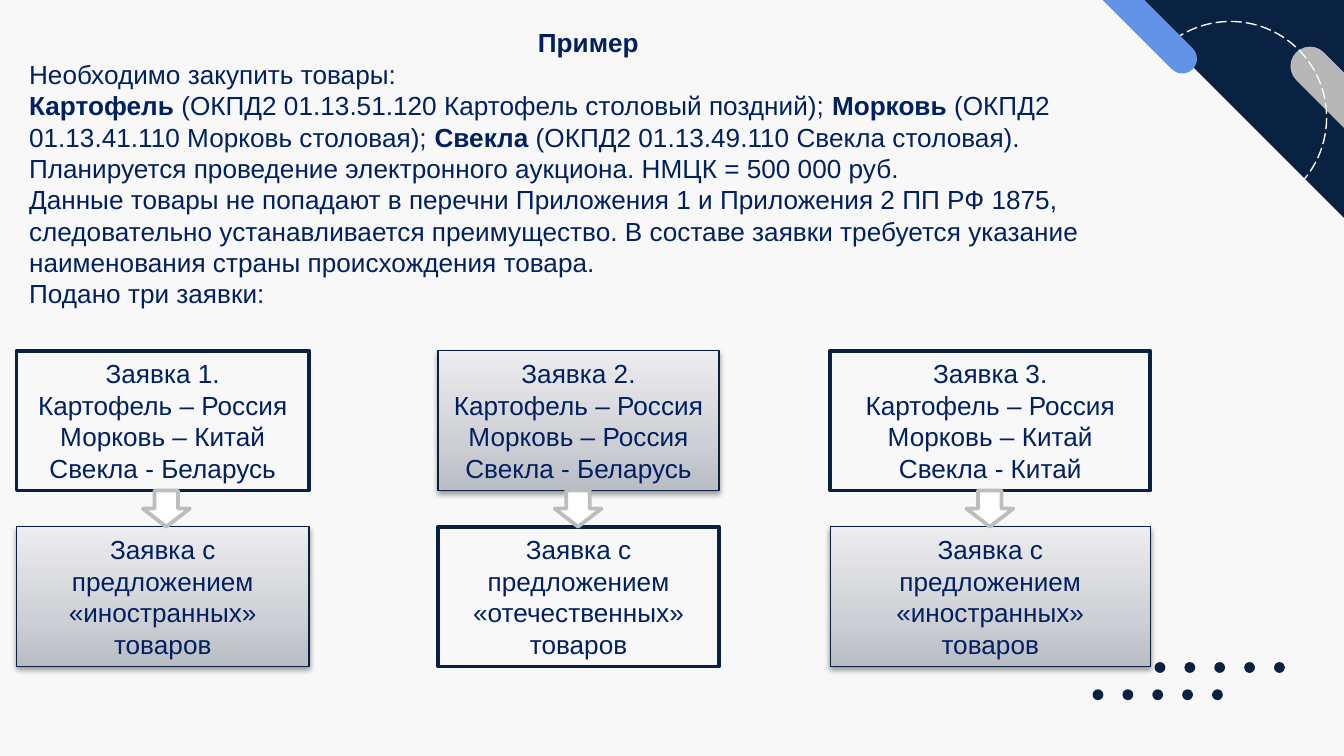
"""Build a slide that compares three bids for a vegetable purchase."""
from dataclasses import dataclass
from typing import NamedTuple

from pptx import Presentation
from pptx.dml.color import RGBColor
from pptx.enum.dml import MSO_LINE
from pptx.enum.shapes import MSO_SHAPE as SHAPE
from pptx.enum.text import MSO_ANCHOR as ANCHOR, MSO_AUTO_SIZE as AUTO, PP_ALIGN as ALIGN
from pptx.oxml import parse_xml
from pptx.oxml.ns import nsdecls, qn
from pptx.util import Pt


@dataclass(frozen=True)
class Theme:
    paper: str = "F8F8F8"
    navy: str = "092241"
    edge: str = "072141"
    text: str = "002060"
    gray: str = "B7B7B7"
    blue: str = "6194E6"
    white: str = "FFFFFF"
    arrow_line: str = "BDBDBD"
    gradient: tuple = ((0, "B9BCC4"), (35, "CED0D5"), (100, "EDEDEF"))
    font: str = "Arial"
    size: float = 14


class Box(NamedTuple):
    left: float
    top: float
    width: float
    height: float


class Run(NamedTuple):
    text: str
    bold: bool = False


class Bid(NamedTuple):
    left: float
    width: float
    lines: tuple
    verdict: str
    shaded: bool


T = Theme()
BID_TOP, VERDICT_TOP, CARD_HEIGHT = 187.9, 282.2, 74.9
ARROW_LEFT, ARROW_STEP = 76.5, 220.6
DOT, DOT_STEP = 5.8, 16
DOT_ROWS = ((618.5, 354.7), (585.3, 369.3))

INTRO = (
    (Run("Пример", True),),
    (Run("Необходимо закупить товары:"),),
    (
        Run("Картофель", True),
        Run(" (ОКПД2 01.13.51.120 Картофель столовый поздний); "),
        Run("Морковь ", True),
        Run("(ОКПД2 01.13.41.110 Морковь столовая); "),
        Run("Свекла", True),
        Run(" (ОКПД2 01.13.49.110 Свекла столовая)."),
    ),
    (Run("Планируется проведение электронного аукциона. НМЦК = 500 000 руб."),),
    (Run("Данные товары не попадают в перечни Приложения 1 и Приложения 2 ПП РФ 1875, "
         "следовательно устанавливается преимущество. В составе заявки требуется указание "
         "наименования страны происхождения товара."),),
    (Run("Подано три заявки:"),),
)

BIDS = (
    Bid(8.9, 156.6, ("Заявка 1.", "Картофель – Россия", "Морковь – Китай", "Свекла - Беларусь"),
        "«иностранных»", False),
    Bid(234.7, 150.5, ("Заявка 2.", "Картофель – Россия", "Морковь – Россия", "Свекла - Беларусь"),
        "«отечественных»", True),
    Bid(444.8, 171.4, ("Заявка 3.", "Картофель – Россия", "Морковь – Китай", "Свекла - Китай"),
        "«иностранных»", False),
)


def rgb(color: str) -> RGBColor:
    return RGBColor.from_string(color)


def add_shape(s, kind, box: Box, fill: str = "", line: str = "", weight: float = 0,
              rotation: float = 0):
    sp = s.shapes.add_shape(kind, *map(Pt, box))
    sp.shadow.inherit = False
    sp.rotation = rotation
    if fill:
        sp.fill.solid()
        sp.fill.fore_color.rgb = rgb(fill)
    else:
        sp.fill.background()
    if line:
        sp.line.color.rgb = rgb(line)
        sp.line.width = Pt(weight)
    else:
        sp.line.fill.background()
    return sp


def shade(sp) -> None:
    props = sp._element.spPr
    props.remove(props.find(qn("a:noFill")))
    stops = "".join(f'<a:gs pos="{pos * 1000}"><a:srgbClr val="{color}"/></a:gs>'
                    for pos, color in T.gradient)
    props.find(qn("a:prstGeom")).addnext(parse_xml(
        f'<a:gradFill {nsdecls("a")} rotWithShape="1"><a:gsLst>{stops}</a:gsLst>'
        '<a:lin ang="16200000" scaled="0"/></a:gradFill>'))
    props.find(qn("a:effectLst")).append(parse_xml(
        f'<a:outerShdw {nsdecls("a")} blurRad="{Pt(3.1)}" dist="{Pt(1.6)}" dir="5400000" '
        'rotWithShape="0"><a:srgbClr val="000000"><a:alpha val="38000"/></a:srgbClr>'
        '</a:outerShdw>'))


def write(tf, paragraphs, aligns) -> None:
    tf.word_wrap = True
    tf.auto_size = AUTO.SHAPE_TO_FIT_TEXT
    for i, (runs, align) in enumerate(zip(paragraphs, aligns)):
        p = tf.add_paragraph() if i else tf.paragraphs[0]
        p.alignment = align
        p.font.name, p.font.size = T.font, Pt(T.size)
        p.font.color.rgb = rgb(T.text)
        for run in runs:
            r = p.add_run()
            r.text = run.text
            r.font.bold = run.bold


def add_card(s, box: Box, lines: tuple, shaded: bool) -> None:
    if shaded:
        sp = add_shape(s, SHAPE.RECTANGLE, box, line=T.edge, weight=0.75)
        shade(sp)
    else:
        sp = add_shape(s, SHAPE.RECTANGLE, box, T.paper, T.navy, 2)
    sp.text_frame.vertical_anchor = ANCHOR.MIDDLE
    write(sp.text_frame, [(Run(line),) for line in lines], [ALIGN.CENTER] * len(lines))


def add_decor(s) -> None:
    for left, top in DOT_ROWS:
        for i in range(5):
            add_shape(s, SHAPE.OVAL, Box(left + i * DOT_STEP, top, DOT, DOT), T.navy)
    add_shape(s, SHAPE.RIGHT_TRIANGLE, Box(602.6, -0.7, 122, 122), T.navy, rotation=180)
    pill = add_shape(s, SHAPE.ROUNDED_RECTANGLE, Box(681.1, 49.7, 90.7, 20.9), T.gray, rotation=45)
    pill.adjustments[0] = 0.5
    ring = add_shape(s, SHAPE.OVAL, Box(607.7, 11.5, 103, 103), line=T.paper, weight=0.75)
    ring.line.dash_style = MSO_LINE.LONG_DASH
    pill = add_shape(s, SHAPE.ROUNDED_RECTANGLE, Box(565.2, -1.4, 86.4, 15.8), T.blue, rotation=45)
    pill.adjustments[0] = 0.5


def main() -> None:
    prs = Presentation()
    prs.slide_width, prs.slide_height = Pt(720), Pt(405)
    s = prs.slides.add_slide(prs.slide_layouts[6])
    s.background.fill.solid()
    s.background.fill.fore_color.rgb = rgb(T.paper)
    add_decor(s)
    intro = s.shapes.add_textbox(*map(Pt, Box(8.5, 10.8, 613.4, 159.8)))
    write(intro.text_frame, INTRO, [ALIGN.CENTER] + [ALIGN.LEFT] * (len(INTRO) - 1))
    for bid in BIDS:
        add_card(s, Box(bid.left, BID_TOP, bid.width, CARD_HEIGHT), bid.lines, bid.shaded)
    for bid in BIDS:
        verdict = ("Заявка с", "предложением", bid.verdict, "товаров")
        add_card(s, Box(bid.left, VERDICT_TOP, bid.width, CARD_HEIGHT), verdict, not bid.shaded)
    for i in range(len(BIDS)):
        box = Box(ARROW_LEFT + i * ARROW_STEP, BID_TOP + CARD_HEIGHT, 25.2, 19.4)
        add_shape(s, SHAPE.DOWN_ARROW, box, T.white, T.arrow_line, 2)
    prs.save("out.pptx")


if __name__ == "__main__":
    main()
